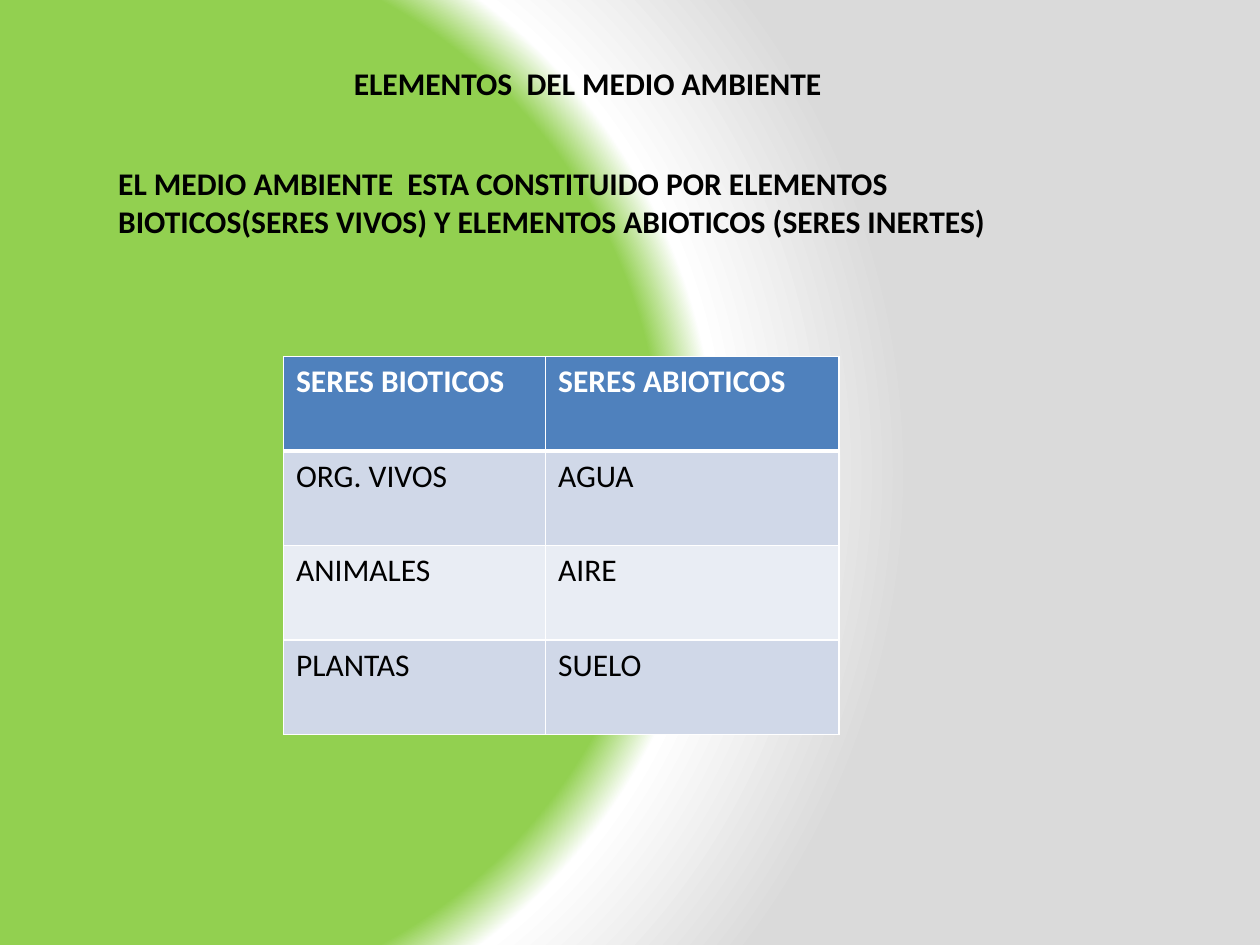
"""Build the slide on the elements of the environment."""
from pptx import Presentation
from pptx.dml.color import RGBColor
from pptx.enum.text import MSO_ANCHOR, PP_ALIGN
from pptx.oxml import parse_xml
from pptx.oxml.ns import nsdecls
from pptx.util import Inches, Pt

COLORS = {
    "green": "92D050", "white": "FFFFFF", "gray": "DADADA", "black": "000000",
    "header": "4F81BD", "odd": "D0D8E8", "even": "E9EDF4",
}


class SlideBuilder:
    """Hold the text style and the current slide."""

    def __init__(self, slide):
        """Start with the slide to fill."""
        self.slide = slide
        self.font_format = {"name": "Calibri", "size": Pt(18)}

    def background(self, stops, focus):
        """Fill the background with a circular gradient."""
        fill = self.slide.background.fill
        fill.solid()
        background_properties = self.slide.element.cSld.bg.bgPr
        stop_xml = "".join(
            f'<a:gs pos="{position * 1000}"><a:srgbClr val="{COLORS[color]}"/></a:gs>'
            for position, color in stops)
        sides = " ".join(f'{side}="{share * 1000}"' for side, share in focus.items())
        gradient = parse_xml(
            f'<a:gradFill {nsdecls("a")} rotWithShape="1"><a:gsLst>{stop_xml}</a:gsLst>'
            f'<a:path path="circle"><a:fillToRect {sides}/></a:path></a:gradFill>')
        background_properties.replace(background_properties[0], gradient)

    def styled_run(self, frame, wording, color, bold):
        """Put one styled run into a text frame."""
        run = frame.paragraphs[0].add_run()
        run.text = wording
        for attribute, value in {**self.font_format, "bold": bold}.items():
            setattr(run.font, attribute, value)
        run.font.color.rgb = RGBColor.from_string(COLORS[color])

    def text(self, wording, left, top, width, height, align=PP_ALIGN.LEFT):
        """Add a bold wrapped text box."""
        box = self.slide.shapes.add_textbox(
            Inches(left), Inches(top), Inches(width), Inches(height))
        frame_format = {"word_wrap": True, "vertical_anchor": MSO_ANCHOR.TOP}
        for attribute, value in frame_format.items():
            setattr(box.text_frame, attribute, value)
        self.styled_run(box.text_frame, wording, "black", True)
        box.text_frame.paragraphs[0].alignment = align

    def border(self, cell, widths):
        """Draw white lines around a cell."""
        properties = cell._tc.get_or_add_tcPr()
        for index, (side, width) in enumerate(widths.items()):
            properties.insert(index, parse_xml(
                f'<a:ln{side} {nsdecls("a")} w="{Pt(width)}"><a:solidFill>'
                f'<a:srgbClr val="{COLORS["white"]}"/></a:solidFill></a:ln{side}>'))

    def table(self, rows, left, top, column_widths, row_height):
        """Add a table with a header and banded rows."""
        grid = self.slide.shapes.add_table(
            len(rows), len(column_widths), Inches(left), Inches(top),
            Inches(sum(column_widths)), Inches(row_height * len(rows))).table
        for column, width in zip(grid.columns, column_widths):
            column.width = Inches(width)
        for row_index, row in enumerate(rows):
            is_header = row_index == 0
            band = "header" if is_header else ("even", "odd")[row_index % 2]
            for column_index, wording in enumerate(row):
                cell = grid.cell(row_index, column_index)
                cell.fill.solid()
                cell.fill.fore_color.rgb = RGBColor.from_string(COLORS[band])
                self.border(cell, {"L": 1, "R": 1, "T": 3 if row_index == 1 else 1,
                                   "B": 3 if is_header else 1})
                self.styled_run(cell.text_frame, wording,
                                "white" if is_header else "black", is_header)


def main():
    """Create and save the presentation."""
    presentation = Presentation()
    presentation.slide_width, presentation.slide_height = Inches(10), Inches(7.5)
    builder = SlideBuilder(
        presentation.slides.add_slide(presentation.slide_layouts[6]))
    builder.background([(68, "green"), (75, "white"), (100, "gray")],
                       {"l": 20, "t": 50, "r": 100, "b": 50})
    builder.text("ELEMENTOS  DEL MEDIO AMBIENTE", 0.5, 0.46, 8.33, 0.75,
                 PP_ALIGN.CENTER)
    beings = [
        ("SERES BIOTICOS", "SERES ABIOTICOS"),
        ("ORG. VIVOS", "AGUA"),
        ("ANIMALES", "AIRE"),
        ("PLANTAS", "SUELO"),
    ]
    builder.table(beings, 2.25, 2.83, (2.08, 2.33), 0.75)
    builder.text("EL MEDIO AMBIENTE  ESTA CONSTITUIDO POR ELEMENTOS "
                 "BIOTICOS(SERES VIVOS) Y ELEMENTOS ABIOTICOS (SERES INERTES)",
                 0.84, 1.25, 7.33, 1.01)
    presentation.save("out.pptx")


if __name__ == "__main__":
    main()
